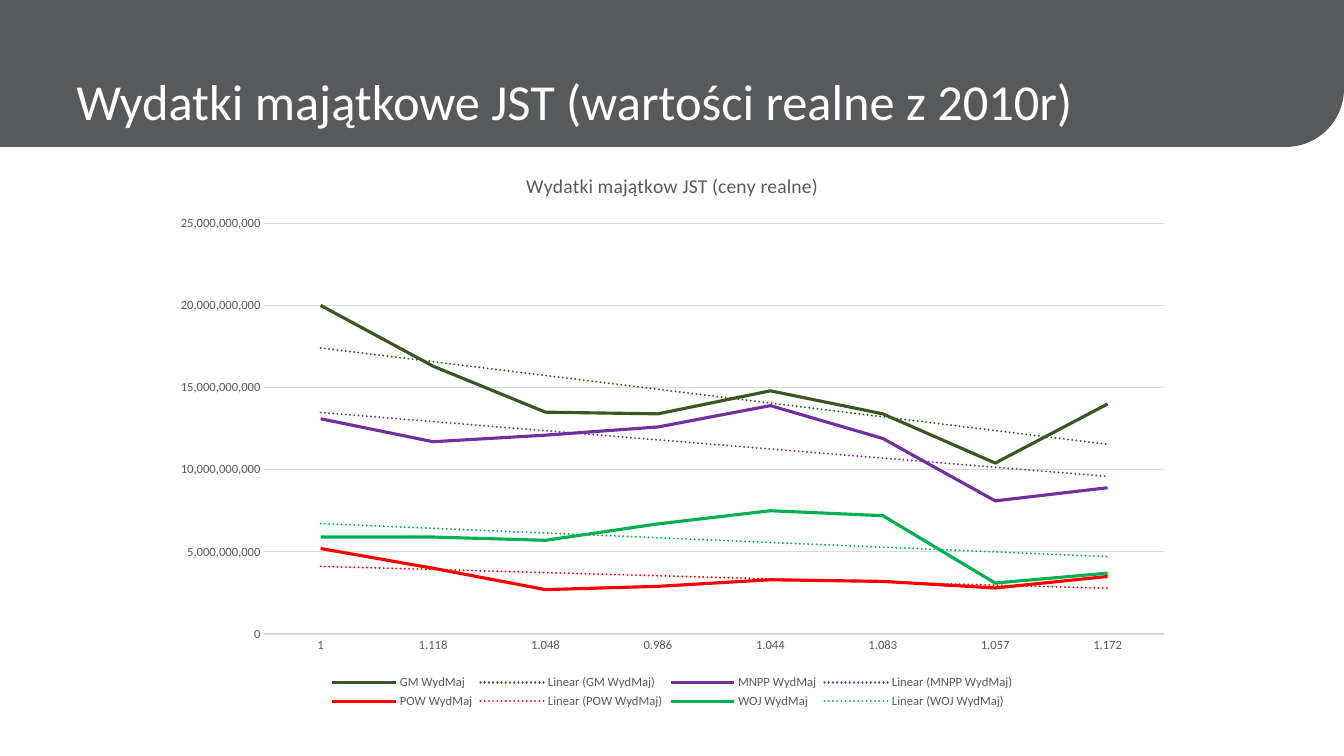
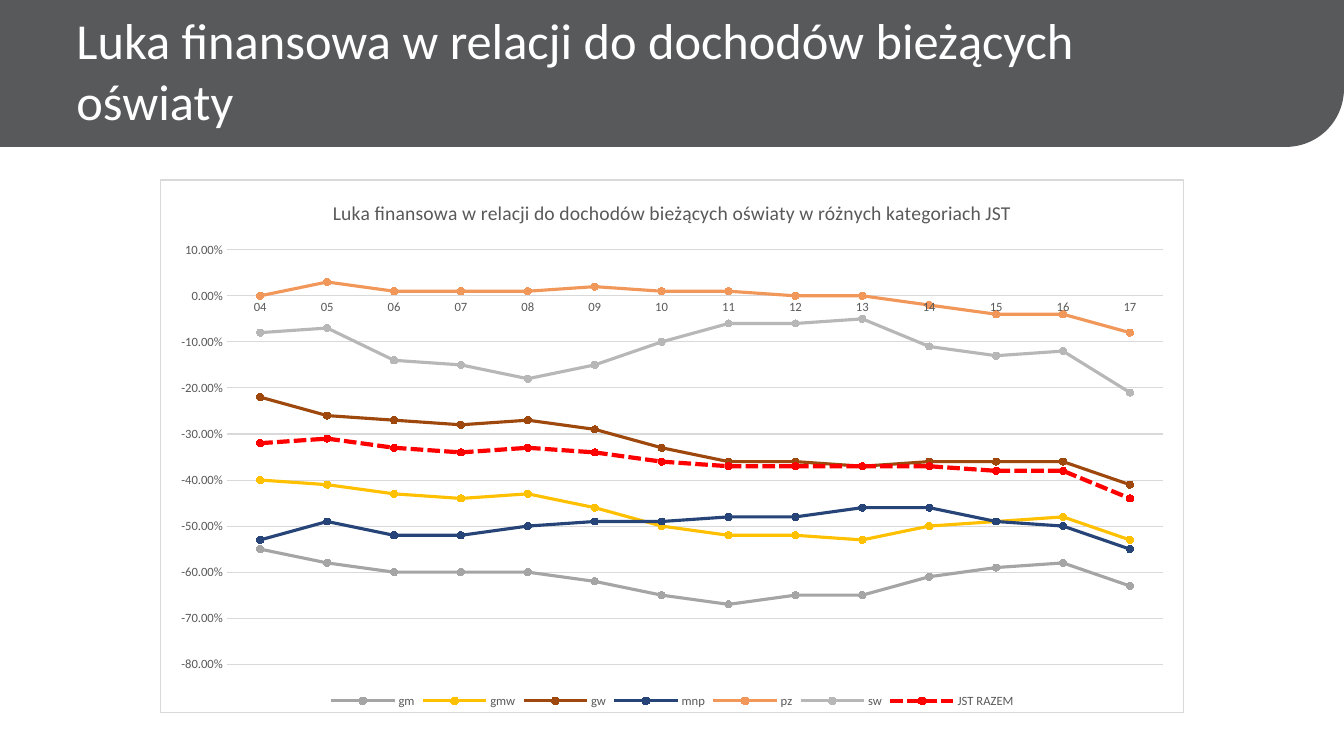
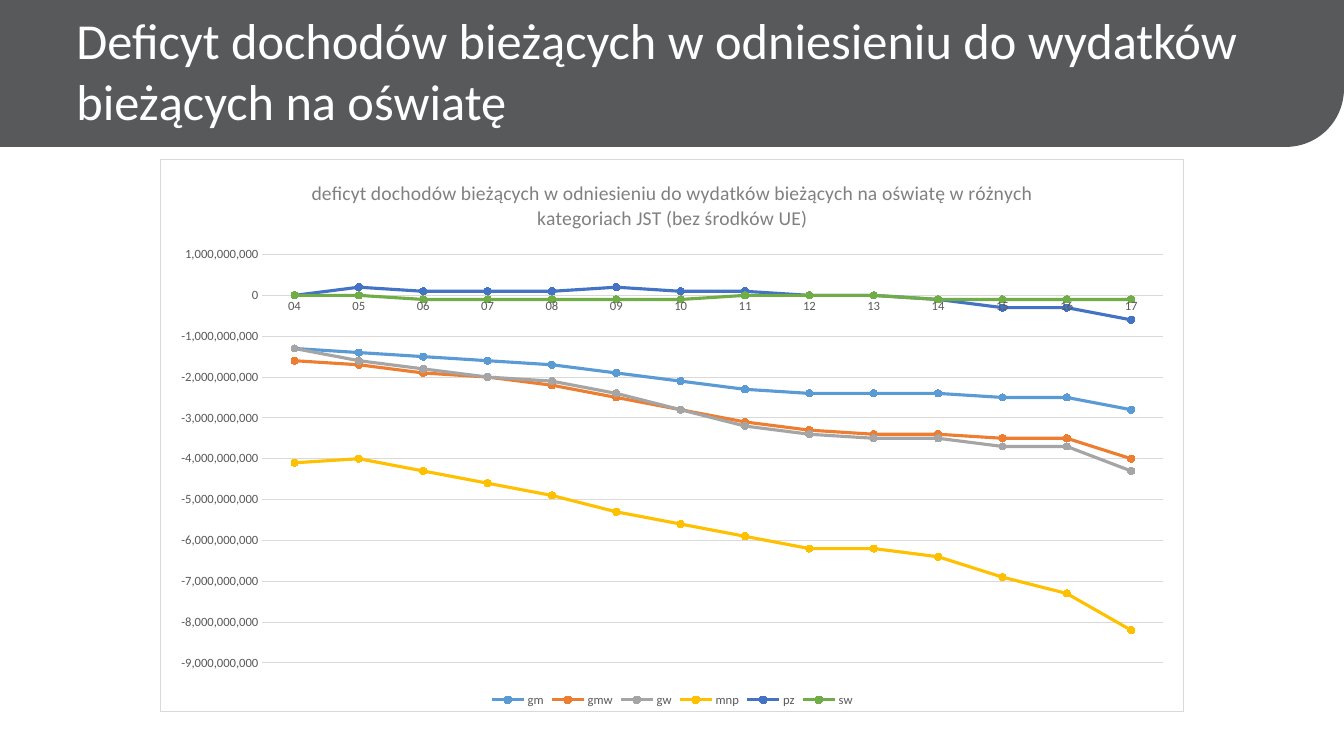
from lxml.etree import fromstring
from pptx import Presentation
from pptx.chart.data import CategoryChartData
from pptx.dml.color import RGBColor
from pptx.enum.chart import XL_CHART_TYPE, XL_LEGEND_POSITION, XL_MARKER_STYLE, XL_TICK_MARK
from pptx.enum.dml import MSO_LINE
from pptx.enum.shapes import MSO_SHAPE
from pptx.enum.text import MSO_ANCHOR
from pptx.oxml.ns import nsdecls, qn
from pptx.util import Pt

FONT = "Calibri"
BAND = RGBColor(0x58, 0x59, 0x5B)
WHITE = RGBColor(0xFF, 0xFF, 0xFF)
BLACK = RGBColor(0, 0, 0)
TEXT = RGBColor(0x59, 0x59, 0x59)
MUTED = RGBColor(0x80, 0x80, 0x80)
RULE = RGBColor(0xD9, 0xD9, 0xD9)
DARK_GREEN = RGBColor(0x38, 0x57, 0x23)
PURPLE = RGBColor(0x70, 0x30, 0xA0)
RED = RGBColor(0xFF, 0, 0)
GREEN = RGBColor(0, 0xB0, 0x50)
GREY = RGBColor(0xA5, 0xA5, 0xA5)
GOLD = RGBColor(0xFF, 0xC0, 0)
LIGHT_GOLD = RGBColor(0xFF, 0xCD, 0x33)
BROWN = RGBColor(0x9E, 0x48, 0x0E)
NAVY = RGBColor(0x26, 0x44, 0x78)
PEACH = RGBColor(0xF1, 0x97, 0x5A)
SILVER = RGBColor(0xB7, 0xB7, 0xB7)
SKY = RGBColor(0x5B, 0x9B, 0xD5)
ORANGE = RGBColor(0xED, 0x7D, 0x31)
BLUE = RGBColor(0x44, 0x72, 0xC4)
LEAF = RGBColor(0x70, 0xAD, 0x47)

YEARS = [f"{year:02d}" for year in range(4, 18)]
DEFLATORS = ["1", "1.118", "1.048", "0.986", "1.044", "1.083", "1.057", "1.172"]
BILLION = 10**9

INVESTMENT = [
    ("GM WydMaj", DARK_GREEN, [20, 16.3, 13.5, 13.4, 14.8, 13.4, 10.4, 14]),
    ("MNPP WydMaj", PURPLE, [13.1, 11.7, 12.1, 12.6, 13.9, 11.9, 8.1, 8.9]),
    ("POW WydMaj", RED, [5.2, 4, 2.7, 2.9, 3.3, 3.2, 2.8, 3.5]),
    ("WOJ WydMaj", GREEN, [5.9, 5.9, 5.7, 6.7, 7.5, 7.2, 3.1, 3.7]),
]
GAP = [
    ("gm", GREY, [-0.55, -0.58, -0.6, -0.6, -0.6, -0.62, -0.65,
                  -0.67, -0.65, -0.65, -0.61, -0.59, -0.58, -0.63]),
    ("gmw", GOLD, [-0.4, -0.41, -0.43, -0.44, -0.43, -0.46, -0.5,
                   -0.52, -0.52, -0.53, -0.5, -0.49, -0.48, -0.53]),
    ("gw", BROWN, [-0.22, -0.26, -0.27, -0.28, -0.27, -0.29, -0.33,
                   -0.36, -0.36, -0.37, -0.36, -0.36, -0.36, -0.41]),
    ("mnp", NAVY, [-0.53, -0.49, -0.52, -0.52, -0.5, -0.49, -0.49,
                   -0.48, -0.48, -0.46, -0.46, -0.49, -0.5, -0.55]),
    ("pz", PEACH, [0, 0.03, 0.01, 0.01, 0.01, 0.02, 0.01,
                   0.01, 0, 0, -0.02, -0.04, -0.04, -0.08]),
    ("sw", SILVER, [-0.08, -0.07, -0.14, -0.15, -0.18, -0.15, -0.1,
                    -0.06, -0.06, -0.05, -0.11, -0.13, -0.12, -0.21]),
    ("JST RAZEM", RED, [-0.32, -0.31, -0.33, -0.34, -0.33, -0.34, -0.36,
                        -0.37, -0.37, -0.37, -0.37, -0.38, -0.38, -0.44]),
]
DEFICIT = [
    ("gm", SKY, [-1.3, -1.4, -1.5, -1.6, -1.7, -1.9, -2.1,
                 -2.3, -2.4, -2.4, -2.4, -2.5, -2.5, -2.8]),
    ("gmw", ORANGE, [-1.6, -1.7, -1.9, -2, -2.2, -2.5, -2.8,
                     -3.1, -3.3, -3.4, -3.4, -3.5, -3.5, -4]),
    ("gw", GREY, [-1.3, -1.6, -1.8, -2, -2.1, -2.4, -2.8,
                  -3.2, -3.4, -3.5, -3.5, -3.7, -3.7, -4.3]),
    ("mnp", GOLD, [-4.1, -4, -4.3, -4.6, -4.9, -5.3, -5.6,
                   -5.9, -6.2, -6.2, -6.4, -6.9, -7.3, -8.2]),
    ("pz", BLUE, [0, 0.2, 0.1, 0.1, 0.1, 0.2, 0.1, 0.1, 0, 0, -0.1, -0.3, -0.3, -0.6]),
    ("sw", LEAF, [0, 0, -0.1, -0.1, -0.1, -0.1, -0.1, 0, 0, 0, -0.1, -0.1, -0.1, -0.1]),
]


def set_font(font, size, color):
    font.name = FONT
    font.size = Pt(size)
    font.bold = False
    font.color.rgb = color


def set_text(tf, text, size=14, color=TEXT):
    p = tf.paragraphs[0]
    p.text = text
    for r in p.runs:
        set_font(r.font, size, color)


def add_titled_slide(prs, title):
    slide = prs.slides.add_slide(prs.slide_layouts[6])
    band = slide.shapes.add_shape(
        MSO_SHAPE.ROUND_1_RECTANGLE, 0, 0, prs.slide_width, Pt(105))
    band.adjustments[0] = 0.395
    band._element.spPr.find(qn("a:xfrm")).set("flipV", "1")
    band.shadow.inherit = False
    band.fill.solid()
    band.fill.fore_color.rgb = BAND
    band.line.fill.background()
    tf = slide.shapes.add_textbox(Pt(47.5), 0, Pt(847), Pt(93)).text_frame
    tf.word_wrap = True
    tf.vertical_anchor = MSO_ANCHOR.BOTTOM
    tf.margin_top = tf.margin_bottom = 0
    set_text(tf, title, size=36, color=WHITE)
    return slide


def style_axes(chart, low, high, step, number_format):
    cat, val = chart.category_axis, chart.value_axis
    for axis in (cat, val):
        axis.major_tick_mark = axis.minor_tick_mark = XL_TICK_MARK.NONE
        set_font(axis.tick_labels.font, 9, TEXT)
    val.has_major_gridlines = True
    for line in (cat.format.line, val.major_gridlines.format.line):
        line.color.rgb = RULE
        line.width = Pt(0.75)
    val.format.line.fill.background()
    val.minimum_scale, val.maximum_scale, val.major_unit = low, high, step
    val.tick_labels.number_format = number_format
    val.tick_labels.number_format_is_linked = False


def style_series(ser, color, markers):
    ser.smooth = False
    ser.format.line.color.rgb = color
    ser.format.line.width = Pt(2.25)
    if markers:
        ser.marker.style = XL_MARKER_STYLE.CIRCLE
        ser.marker.size = 5
        ser.marker.format.fill.solid()
        ser.marker.format.fill.fore_color.rgb = color
        ser.marker.format.line.color.rgb = color


def add_trendline(ser, color):
    trend = fromstring(
        f'<c:trendline {nsdecls("c", "a")}><c:spPr><a:ln w="{Pt(1.5)}" cap="rnd">'
        f'<a:solidFill><a:srgbClr val="{color}"/></a:solidFill><a:prstDash val="sysDot"/>'
        '</a:ln></c:spPr><c:trendlineType val="linear"/>'
        '<c:dispRSqr val="0"/><c:dispEq val="0"/></c:trendline>')
    ser._element.find(qn("c:cat")).addprevious(trend)


def set_frame(chart, framed):
    fill, line = "<a:noFill/>", "<a:noFill/>"
    if framed:
        fill, line = (f'<a:solidFill><a:srgbClr val="{c}"/></a:solidFill>' for c in (WHITE, RULE))
    frame = fromstring(
        f'<c:spPr {nsdecls("c", "a")}>{fill}<a:ln w="{Pt(0.75)}">{line}</a:ln></c:spPr>')
    chart._chartSpace.find(qn("c:chart")).addnext(frame)


def add_line_chart(slide, title, cats, rows, top, height, scale, number_format="#,##0",
                   unit=1, markers=True, title_color=TEXT):
    data = CategoryChartData(number_format=number_format)
    data.categories = cats
    for name, _, values in rows:
        data.add_series(name, [round(v * unit, 2) for v in values])
    kind = XL_CHART_TYPE.LINE_MARKERS if markers else XL_CHART_TYPE.LINE
    chart = slide.shapes.add_chart(
        kind, Pt(114.5), Pt(top), Pt(731.5), Pt(height), data).chart
    set_font(chart.font, 10, BLACK)
    chart.has_title = True
    set_text(chart.chart_title.text_frame, title, color=title_color)
    chart.has_legend = True
    chart.legend.position = XL_LEGEND_POSITION.BOTTOM
    chart.legend.include_in_layout = False
    set_font(chart.legend.font, 9, TEXT)
    style_axes(chart, *scale, number_format)
    set_frame(chart, framed=markers)
    plot = chart.plots[0]
    plot.vary_by_categories = False
    for ser, (_, color, _) in zip(plot.series, rows):
        style_series(ser, color, markers)
    return chart


def main():
    prs = Presentation()
    prs.slide_width, prs.slide_height = Pt(960), Pt(540)

    s = add_titled_slide(prs, "Wydatki majątkowe JST (wartości realne z 2010r)")
    chart = add_line_chart(
        s, "Wydatki majątkow JST (ceny realne)", DEFLATORS, INVESTMENT, 108.7, 400.3,
        (0, 25 * BILLION, 5 * BILLION), unit=BILLION, markers=False)
    for ser, (_, color, _) in zip(chart.plots[0].series, INVESTMENT):
        add_trendline(ser, color)

    s = add_titled_slide(prs, "Luka finansowa w relacji do dochodów bieżących\voświaty")
    chart = add_line_chart(
        s, "Luka finansowa w relacji do dochodów bieżących oświaty w różnych kategoriach JST",
        YEARS, GAP, 128.2, 380.9, (-0.8, 0.1, 0.1), number_format="0.00%")
    total = chart.plots[0].series[len(GAP) - 1]
    total.format.line.width = Pt(3)
    total.format.line.dash_style = MSO_LINE.SQUARE_DOT
    total.marker.format.fill.fore_color.rgb = LIGHT_GOLD

    s = add_titled_slide(
        prs, "Deficyt dochodów bieżących w odniesieniu do wydatków bieżących na oświatę")
    add_line_chart(
        s, "deficyt dochodów bieżących w odniesieniu do wydatków bieżących na oświatę "
        "w różnych kategoriach JST (bez środków UE)",
        YEARS, DEFICIT, 113.8, 394.6, (-9 * BILLION, BILLION, BILLION),
        unit=BILLION, title_color=MUTED)

    prs.save("out.pptx")


if __name__ == "__main__":
    main()
